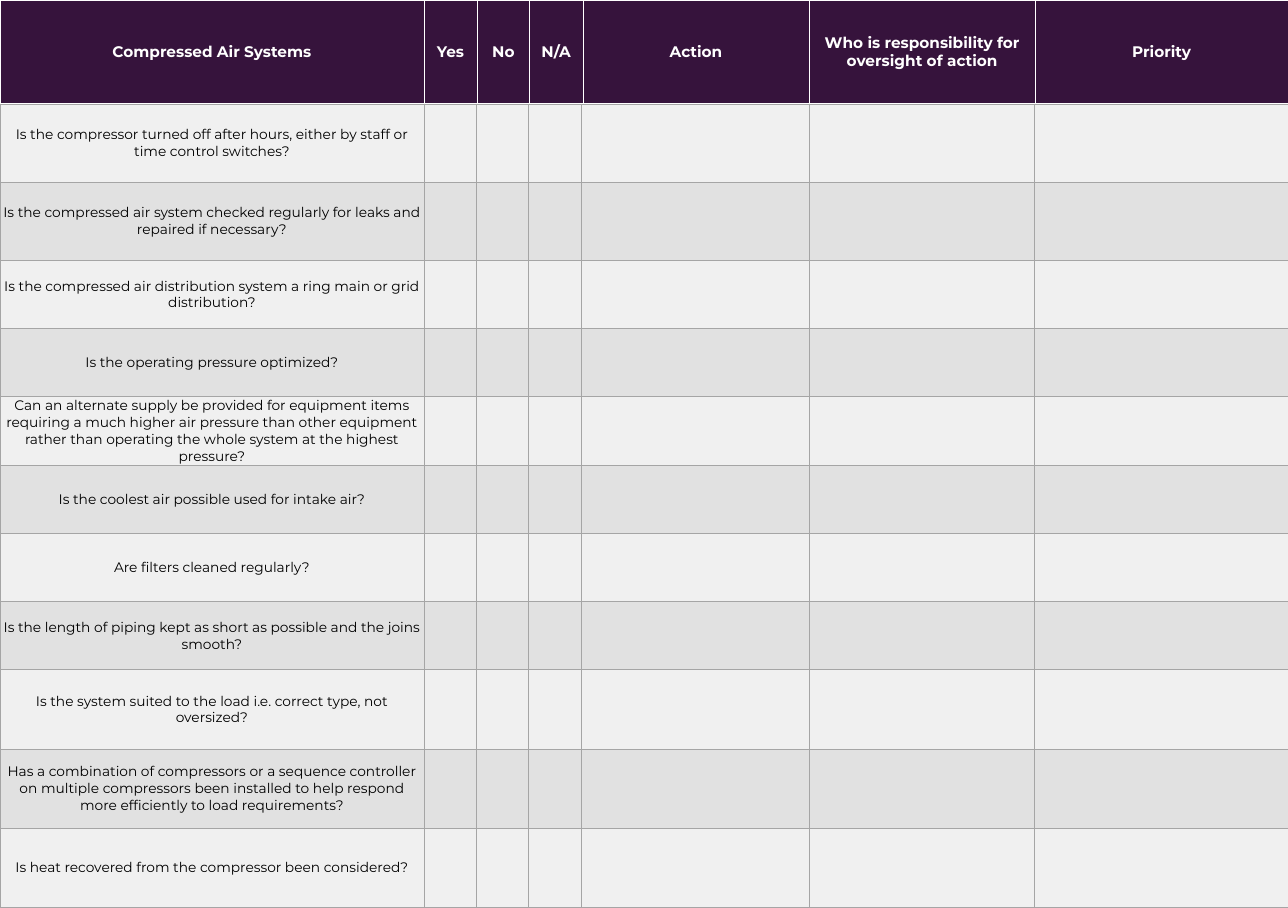
import pptx
import pptx.util
import pptx.dml.color
import pptx.enum.text
import pptx.oxml.ns
import lxml.etree

Inches = pptx.util.Inches
RGBColor = pptx.dml.color.RGBColor

WHITE = RGBColor(0xFF, 0xFF, 0xFF)
BLACK = RGBColor(0x00, 0x00, 0x00)
PURPLE = RGBColor(0x36, 0x13, 0x3C)
GRID = RGBColor(0xA5, 0xA5, 0xA5)
BANDS = [RGBColor(0xF0, 0xF0, 0xF0), RGBColor(0xE1, 0xE1, 0xE1)]
FONT = "Montserrat"

HEADINGS = ["Compressed Air Systems", "Yes", "No", "N/A", "Action",
            "Who is responsibility for oversight of action", "Priority"]
HEADING_WIDTHS = [7.7, 0.97, 0.95, 0.97, 4.11, 4.11, 4.59]
HEADING_HEIGHT = 1.89

QUESTIONS = [
    "Is the compressor turned off after hours, either by staff or time control switches?",
    "Is the compressed air system checked regularly for leaks and repaired if necessary?",
    "Is the compressed air distribution system a ring main or grid distribution?",
    "Is the operating pressure optimized?",
    "Can an alternate supply be provided for equipment items requiring a much higher "
    "air pressure than other equipment rather than operating the whole system at the "
    "highest pressure?",
    "Is the coolest air possible used for intake air?",
    "Are filters cleaned regularly?",
    "Is the length of piping kept as short as possible and the joins smooth?",
    "Is the system suited to the load i.e. correct type, not oversized?",
    "Has a combination of compressors or a sequence controller on multiple compressors "
    "been installed to help respond more efficiently to load requirements?",
    "Is heat recovered from the compressor been considered?",
]
QUESTION_WIDTHS = [7.7, 0.95, 0.95, 0.97, 4.14, 4.08, 4.62]
QUESTION_HEIGHTS = [1.42] * 2 + [1.24] * 6 + [1.44] * 3


def add_grid(slide, top, widths, heights):
    """Add a plain table at the left edge of the slide."""
    table = slide.shapes.add_table(len(heights), len(widths), 0, Inches(top),
                                   Inches(sum(widths)), Inches(sum(heights))).table
    table.first_row = table.horz_banding = False
    for column, width in zip(table.columns, widths):
        column.width = Inches(width)
    for row, height in zip(table.rows, heights):
        row.height = Inches(height)
    return table


def format_cell(cell, text, size, color, bold, fill, line, bottom=1):
    """Set the borders, fill and centred text of one cell."""
    tcPr = cell._tc.get_or_add_tcPr()
    for side, width in (("L", 1), ("R", 1), ("T", 1), ("B", bottom)):
        ln = lxml.etree.SubElement(tcPr, pptx.oxml.ns.qn("a:ln" + side),
                                   w=str(pptx.util.Pt(width)))
        solid = lxml.etree.SubElement(ln, pptx.oxml.ns.qn("a:solidFill"))
        lxml.etree.SubElement(solid, pptx.oxml.ns.qn("a:srgbClr"), val=str(line))
    cell.fill.solid()
    cell.fill.fore_color.rgb = fill
    cell.vertical_anchor = pptx.enum.text.MSO_ANCHOR.MIDDLE
    if text:
        p = cell.text_frame.paragraphs[0]
        p.alignment = pptx.enum.text.PP_ALIGN.CENTER
        r = p.add_run()
        r.text = text
        r.font.name = FONT
        r.font.size = pptx.util.Pt(size)
        r.font.bold = bold
        r.font.color.rgb = color


prs = pptx.Presentation()
prs.slide_width = Inches(23.4)
prs.slide_height = Inches(16.5)
s = prs.slides.add_slide(prs.slide_layouts[6])

# Heading row
headings = add_grid(s, 0, HEADING_WIDTHS, [HEADING_HEIGHT])
for cell, text in zip(headings.rows[0].cells, HEADINGS):
    format_cell(cell, text, 20, WHITE, True, PURPLE, WHITE, bottom=3)

# Checklist with empty answer cells
checklist = add_grid(s, HEADING_HEIGHT, QUESTION_WIDTHS, QUESTION_HEIGHTS)
for i, question in enumerate(QUESTIONS):
    for j, cell in enumerate(checklist.rows[i].cells):
        format_cell(cell, question if j == 0 else "", 18, BLACK, False,
                    BANDS[i % 2], GRID)
    cell = checklist.cell(i, 0)
    cell.margin_left = cell.margin_right = cell.margin_top = Inches(0.01)
    cell.margin_bottom = 0

prs.save("out.pptx")
